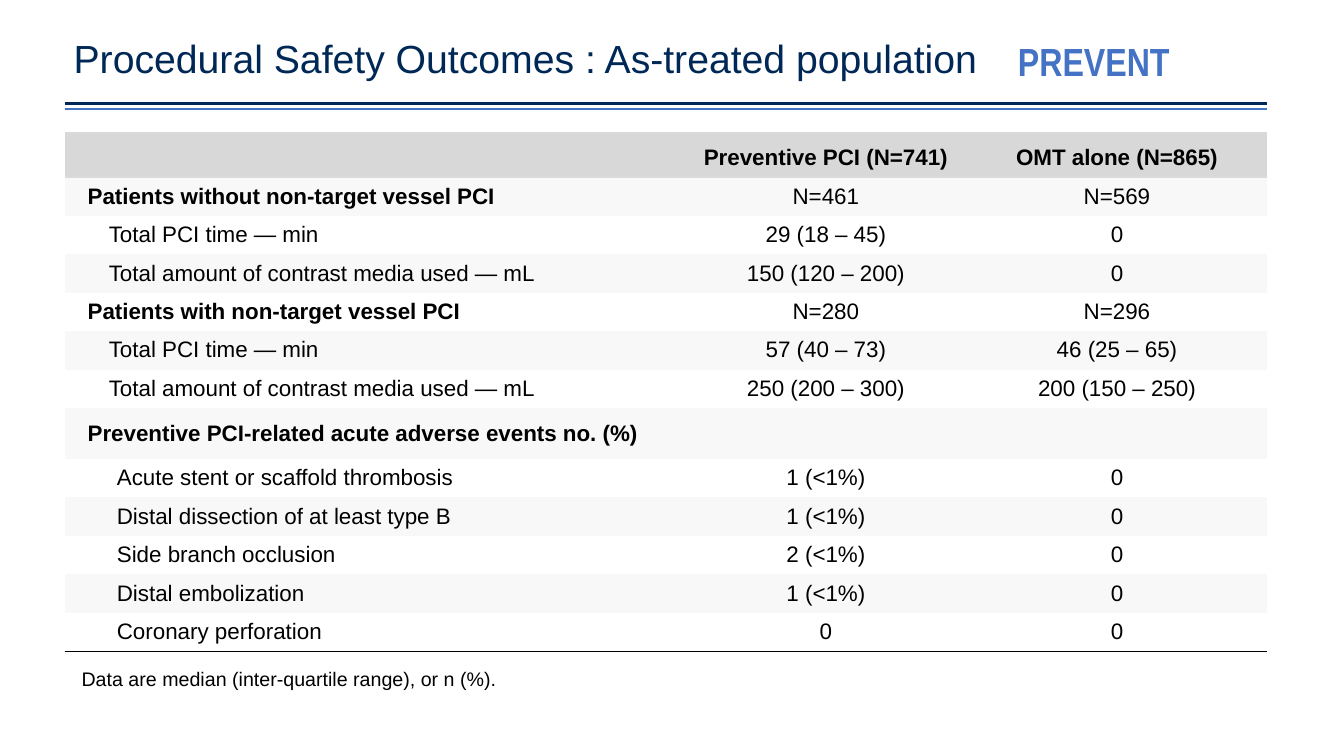
from lxml import etree
from pptx import Presentation, util as u
from pptx.dml.color import RGBColor
from pptx.enum import shapes, text
from pptx.oxml.ns import qn

WIDTH, HEIGHT = u.Inches(13.33), u.Inches(7.5)
NAVY, BLUE, BLACK = "002856", "4472C4", "000000"
HEADER_FILL, BAND_FILL, HEADER_EDGE = "D8D8D8", "F8F8F8", "DADADA"
NO_GRID_STYLE = "{2D5ABB26-0587-4C30-8999-92F81FD0307C}"
LEFT, SPAN = 4.8, 89.5
COLUMN_WEIGHTS = (6.15, 2.79, 2.98)
ROW_WEIGHTS = {"header": 44, "group": 38.5, "measure": 38.5, "heading": 51, "event": 38.5}
INDENTS = {"header": 0, "group": 0.16, "measure": 0.37, "heading": 0.16, "event": 0.45}
OUTCOMES = [
    ("header", "", "Preventive PCI (N=741)", "OMT alone (N=865)"),
    ("group", "Patients without non-target vessel PCI", "N=461", "N=569"),
    ("measure", "Total PCI time — min", "29 (18 – 45)", "0"),
    ("measure", "Total amount of contrast media used — mL", "150 (120 – 200)", "0"),
    ("group", "Patients with non-target vessel PCI", "N=280", "N=296"),
    ("measure", "Total PCI time — min", "57 (40 – 73)", "46 (25 – 65)"),
    ("measure", "Total amount of contrast media used — mL", "250 (200 – 300)", "200 (150 – 250)"),
    ("heading", "Preventive PCI-related acute adverse events no. (%)", "", ""),
    ("event", "Acute stent or scaffold thrombosis", "1 (<1%)", "0"),
    ("event", "Distal dissection of at least type B", "1 (<1%)", "0"),
    ("event", "Side branch occlusion", "2 (<1%)", "0"),
    ("event", "Distal embolization", "1 (<1%)", "0"),
    ("event", "Coronary perforation", "0", "0"),
]


def color(value):
    """Turn a hex string into a colour."""
    return RGBColor.from_string(value)


def share(left, top, width, height):
    """Turn percentages of the slide into a box of lengths."""
    return [round(part * side / 100) for part, side in
            zip((left, top, width, height), (WIDTH, HEIGHT) * 2)]


def style_text(frame, words, size, fill, font="Arial", bold=False):
    """Write one paragraph into a frame and format it."""
    frame.text = words
    para = frame.paragraphs[0]
    para.alignment = text.PP_ALIGN.LEFT
    for span in para.runs:
        span.font.name, span.font.size, span.font.bold = font, u.Pt(size), bold
        span.font.color.rgb = color(fill)
    return para


def add_title(page, box):
    """Move the title placeholder into the box and format it."""
    title = page.shapes.title
    title.left, title.top, title.width, title.height = box
    frame = title.text_frame
    frame.auto_size = text.MSO_AUTO_SIZE.NONE
    frame.vertical_anchor = text.MSO_ANCHOR.TOP
    para = style_text(frame, "Procedural Safety Outcomes : As-treated population", 28, NAVY)
    para.line_spacing = 0.9


def add_label(page, box, words, size, fill, anchor, **style):
    """Place a wrapping text box."""
    frame = page.shapes.add_textbox(*box).text_frame
    frame.word_wrap = True
    frame.vertical_anchor = anchor
    style_text(frame, words, size, fill, **style)


def add_rule(page, box, fill, weight):
    """Draw a horizontal rule along the top of the box."""
    left, top, width, _ = box
    rule = page.shapes.add_connector(shapes.MSO_CONNECTOR.STRAIGHT, left, top, left + width, top)
    rule.line.color.rgb = color(fill)
    rule.line.width = u.Pt(weight)
    etree.SubElement(rule._element.spPr, qn("a:effectLst"))


def add_edge(cell, side, fill):
    """Draw a one-point border on one side of a cell."""
    edge = etree.Element(qn(f"a:{side}"), w=str(u.Pt(1)))
    paint = etree.SubElement(edge, qn("a:solidFill"))
    etree.SubElement(paint, qn("a:srgbClr"), val=fill)
    properties = cell._tc.get_or_add_tcPr()
    borders = [child for child in properties if child.tag.startswith(qn("a:ln"))]
    properties.insert(len(borders), edge)


def fill_cell(cell, kind, column, words, banded):
    """Write and format one table cell."""
    cell.vertical_anchor = text.MSO_ANCHOR.MIDDLE
    cell.margin_left = cell.margin_right = u.Inches(0.07)
    cell.margin_top = cell.margin_bottom = 0
    bold = kind == "header" or (column == 0 and kind in ("group", "heading"))
    para = style_text(cell.text_frame, words, 16, BLACK, bold=bold)
    if column:
        para.alignment = text.PP_ALIGN.CENTER
    else:
        para._p.get_or_add_pPr().set("marL", str(u.Inches(INDENTS[kind])))
    if kind == "header":
        para.line_spacing = 1.2
        add_edge(cell, "lnT", HEADER_EDGE)
        add_edge(cell, "lnB", HEADER_EDGE)
    if kind == "header" or banded:
        cell.fill.solid()
        cell.fill.fore_color.rgb = color(HEADER_FILL if kind == "header" else BAND_FILL)
    else:
        cell.fill.background()


def add_outcomes(page, box):
    """Build the outcomes table inside the box."""
    table = page.shapes.add_table(len(OUTCOMES), len(COLUMN_WEIGHTS), *box).table
    table.first_row = table.horz_banding = False
    table._tbl.tblPr.find(qn("a:tableStyleId")).text = NO_GRID_STYLE
    for column, weight in zip(table.columns, COLUMN_WEIGHTS):
        column.width = round(box[2] * weight / sum(COLUMN_WEIGHTS))
    total = sum(ROW_WEIGHTS[kind] for kind, *_ in OUTCOMES)
    for index, (kind, *entries) in enumerate(OUTCOMES):
        table.rows[index].height = round(box[3] * ROW_WEIGHTS[kind] / total)
        for column, words in enumerate(entries):
            fill_cell(table.cell(index, column), kind, column, words, index % 2 == 1)
    for cell in table.rows[len(OUTCOMES) - 1].cells:
        add_edge(cell, "lnB", BLACK)


def main():
    """Build and save the slide."""
    deck = Presentation()
    deck.slide_width, deck.slide_height = WIDTH, HEIGHT
    page = deck.slides.add_slide(deck.slide_layouts.get_by_name("Title Only"))
    add_title(page, share(4.73, 4.53, 86.3, 10.5))
    add_label(page, share(75, 4.27, 19.3, 7.6), "PREVENT", 28, BLUE,
              text.MSO_ANCHOR.TOP, font="Arial Narrow", bold=True)
    add_rule(page, share(LEFT, 13.73, SPAN, 0), NAVY, 2.25)
    add_rule(page, share(LEFT, 14.4, SPAN, 0), BLUE, 1)
    add_outcomes(page, share(LEFT, 17.6, SPAN, 68.6))
    add_label(page, share(5.33, 87.5, 78.2, 4.5),
              "Data are median (inter-quartile range), or n (%).", 14, BLACK, text.MSO_ANCHOR.MIDDLE)
    deck.save("out.pptx")


if __name__ == "__main__":
    main()
